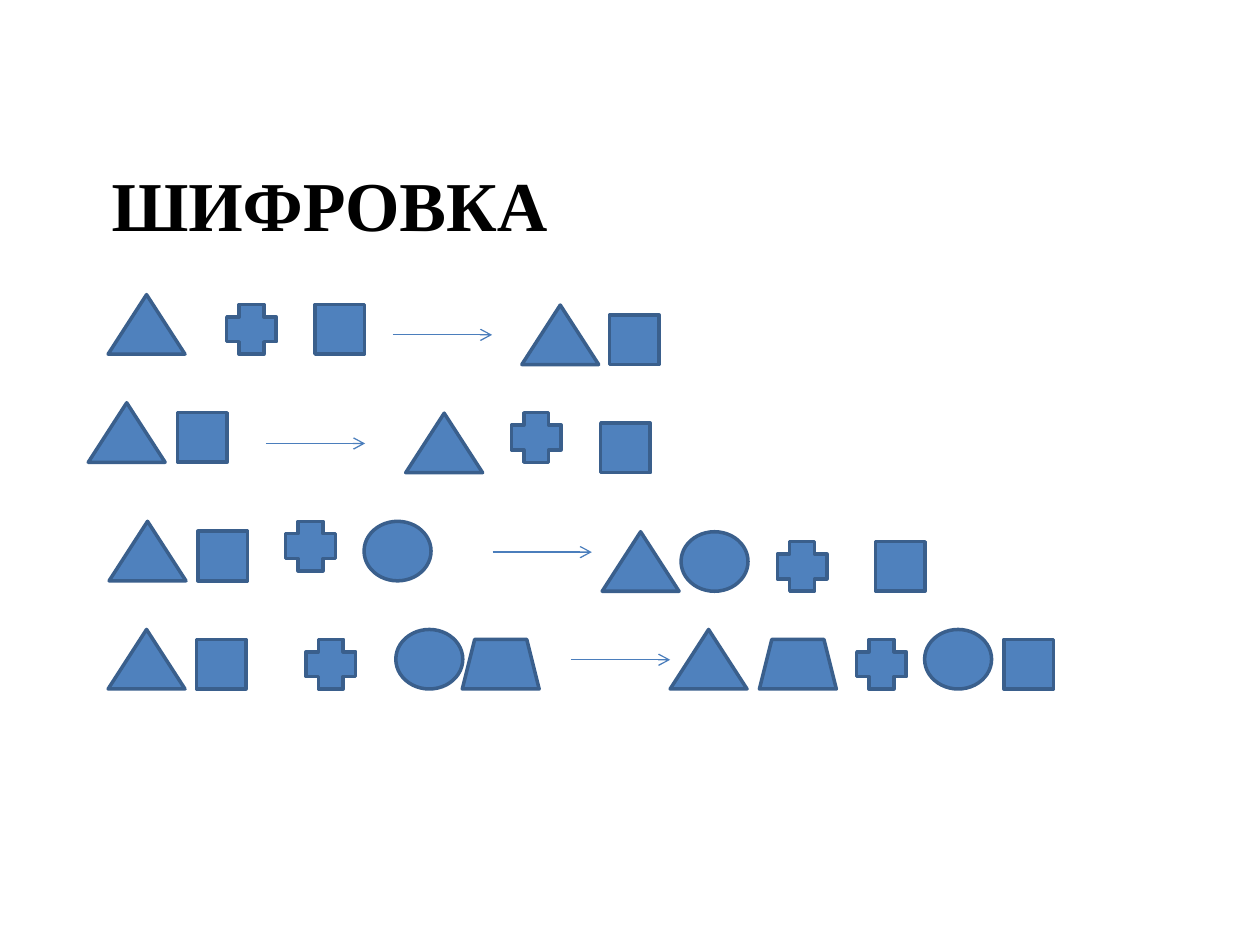
from lxml import etree
from pptx import Presentation
from pptx import util as u
from pptx.dml.color import RGBColor
from pptx.enum import shapes, text
from pptx.oxml import ns

BLACK = RGBColor(0x00, 0x00, 0x00)
BLUE = RGBColor(0x4F, 0x81, 0xBD)
OUTLINE = RGBColor(0x3A, 0x5F, 0x8C)
ARROW = RGBColor(0x4B, 0x7E, 0xBC)
KIND = shapes.MSO_SHAPE
ARROW_LENGTH = 2

FIGURES = {
    "triangle": (KIND.ISOSCELES_TRIANGLE, 1.55, 1.2),
    "square": (KIND.RECTANGLE, 1, 1),
    "plus": (KIND.CROSS, 1, 1),
    "circle": (KIND.OVAL, 1.35, 1.2),
    "trapezoid": (KIND.TRAPEZOID, 1.55, 1),
}

FIGURE_GROUPS = [
    (7.14, [("triangle", 2.18), ("plus", 4.57), ("square", 6.35)]),
    (7.35, [("triangle", 10.52), ("square", 12.29)]),
    (9.32, [("triangle", 1.78), ("square", 3.58), ("plus", 10.31)]),
    (9.53, [("triangle", 8.18), ("square", 12.11)]),
    (11.51, [("plus", 5.76)]),
    (11.71, [("triangle", 2.2), ("square", 3.99), ("circle", 7.34)]),
    (11.92, [("triangle", 12.14), ("circle", 13.73), ("plus", 15.67), ("square", 17.65)]),
    (13.89, [("triangle", 2.18), ("square", 3.96), ("plus", 6.17),
             ("circle", 7.98), ("trapezoid", 9.32), ("triangle", 13.51),
             ("trapezoid", 15.31), ("plus", 17.27), ("circle", 18.64),
             ("square", 20.24)]),
]

ARROWS = [(7.92, 6.75), (5.36, 8.94), (9.93, 11.13), (11.51, 13.3)]


def write(para, words, font="Times New Roman", size=40, bold=False, color=BLACK):
    span = para.add_run()
    span.text = words
    span.font.name = font
    span.font.size = u.Pt(size)
    span.font.bold = bold
    span.font.color.rgb = color


class Painter:
    fill = BLUE
    outline = OUTLINE
    outline_width = u.Pt(2)
    arrow_width = u.Pt(0.75)

    def __init__(self, page):
        self.page = page

    def title(self, words, left, top, width, height):
        box = self.page.shapes.add_textbox(u.Cm(left), u.Cm(top), u.Cm(width), u.Cm(height))
        frame = box.text_frame
        frame.word_wrap = True
        frame.vertical_anchor = text.MSO_ANCHOR.TOP
        frame.margin_top = u.Cm(0.28)
        write(frame.paragraphs[0], words, bold=True)

    def figure(self, name, left, bottom):
        kind, width, height = FIGURES[name]
        shape = self.page.shapes.add_shape(
            kind, u.Cm(left), u.Cm(bottom - height), u.Cm(width), u.Cm(height))
        shape.shadow.inherit = False
        shape.fill.solid()
        shape.fill.fore_color.rgb = self.fill
        shape.line.color.rgb = self.outline
        shape.line.width = self.outline_width

    def arrow(self, left, top):
        connector = self.page.shapes.add_connector(
            shapes.MSO_CONNECTOR.STRAIGHT,
            u.Cm(left), u.Cm(top), u.Cm(left + ARROW_LENGTH), u.Cm(top))
        connector.line.color.rgb = ARROW
        connector.line.width = self.arrow_width
        line = connector.line._get_or_add_ln()
        etree.SubElement(line, ns.qn("a:tailEnd"), type="arrow")
        etree.SubElement(connector._element.spPr, ns.qn("a:effectLst"))


def main():
    deck = Presentation()
    deck.slide_width, deck.slide_height = u.Cm(25.4), u.Cm(19.05)
    painter = Painter(deck.slides.add_slide(deck.slide_layouts[6]))
    painter.title("ШИФРОВКА", 2, 2.98, 21.6, 3.18)
    for bottom, figures in FIGURE_GROUPS:
        for name, left in figures:
            painter.figure(name, left, bottom)
    for left, top in ARROWS:
        painter.arrow(left, top)
    deck.save("out.pptx")


if __name__ == "__main__":
    main()
